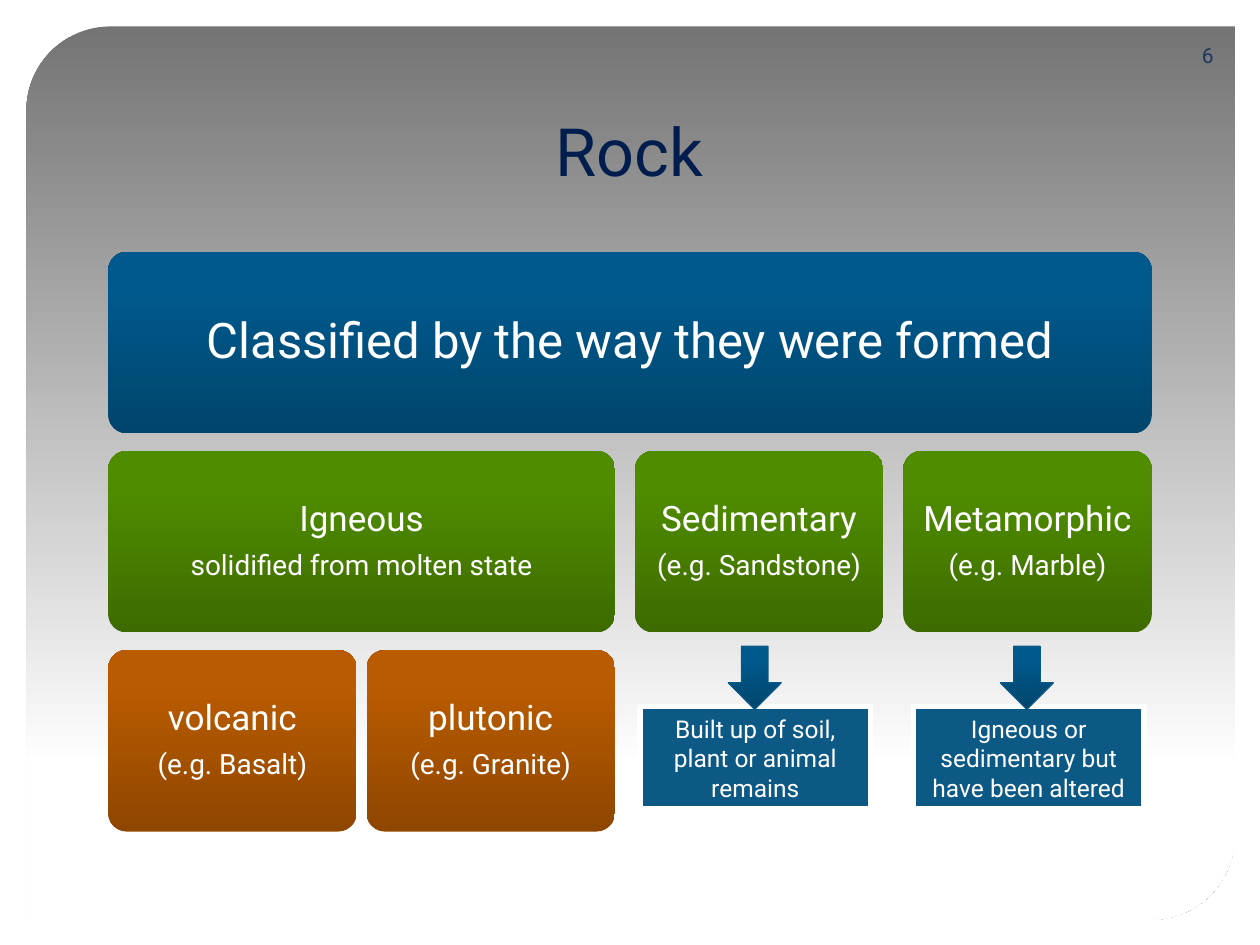
import pptx
import pptx.util
import pptx.dml.color
import pptx.enum.shapes
import pptx.enum.text

Inches = pptx.util.Inches
Pt = pptx.util.Pt
RGBColor = pptx.dml.color.RGBColor
SHAPE = pptx.enum.shapes.MSO_SHAPE
ALIGN = pptx.enum.text.PP_ALIGN
ANCHOR = pptx.enum.text.MSO_ANCHOR

FONT = "Roboto"
WHITE = RGBColor(0xFF, 0xFF, 0xFF)
GREY = RGBColor(0x74, 0x74, 0x74)
NAVY = RGBColor(0x00, 0x1D, 0x4D)
NUMBER_BLUE = RGBColor(0x1B, 0x38, 0x61)
NOTE_BLUE = RGBColor(0x0C, 0x59, 0x86)
ARROW_EDGE = RGBColor(0x09, 0x58, 0x86)
BLUE = (RGBColor(0x00, 0x45, 0x6D), RGBColor(0x00, 0x59, 0x8D))
GREEN = (RGBColor(0x3D, 0x6B, 0x00), RGBColor(0x4F, 0x8C, 0x00))
ORANGE = (RGBColor(0x8F, 0x46, 0x00), RGBColor(0xB9, 0x5B, 0x00))

LEFT, TOP = 0.86, 2
CARD_WIDTH, CARD_HEIGHT = 1.97, 1.44
ROW_STEP = CARD_HEIGHT + 0.14
NARROW_GAP, WIDE_GAP = 0.08, 0.16
PAIR_WIDTH = 2 * CARD_WIDTH + NARROW_GAP
PLUTONIC_LEFT = LEFT + CARD_WIDTH + NARROW_GAP
SEDIMENTARY_LEFT = LEFT + PAIR_WIDTH + WIDE_GAP
METAMORPHIC_LEFT = SEDIMENTARY_LEFT + CARD_WIDTH + WIDE_GAP
FULL_WIDTH = METAMORPHIC_LEFT + CARD_WIDTH - LEFT


class RockSlide:
    def __init__(self, deck):
        self.slide = deck.slides.add_slide(deck.slide_layouts[5])

    def fill_text(self, frame, lines, sizes, color, align=ALIGN.CENTER):
        frame.text = "\n".join(lines)
        frame.word_wrap = True
        for paragraph, size in zip(frame.paragraphs, sizes):
            paragraph.alignment = align
            for run in paragraph.runs:
                run.font.name = FONT
                run.font.size = Pt(size)
                run.font.color.rgb = color

    def shape(self, kind, left, top, width, height):
        shape = self.slide.shapes.add_shape(
            kind, Inches(left), Inches(top), Inches(width), Inches(height))
        shape.shadow.inherit = False
        shape.line.fill.background()
        return shape

    def shade(self, shape, colors, angle, end):
        shape.fill.gradient()
        shape.fill.gradient_angle = angle
        for stop, color, position in zip(shape.fill.gradient_stops, colors, (0, end)):
            stop.color.rgb = color
            stop.position = position

    def panel(self):
        panel = self.shape(SHAPE.ROUND_2_DIAG_RECTANGLE, 0.21, 0.21, 9.59, 7.09)
        panel.adjustments[0] = 0.094
        panel.adjustments[1] = 0
        self.shade(panel, (GREY, WHITE), 270, 0.83)

    def title(self, text):
        title = self.slide.shapes.title
        title.left, title.top = Inches(0.85), Inches(0.42)
        title.width, title.height = Inches(8.29), Inches(1.14)
        title.text_frame.vertical_anchor = ANCHOR.BOTTOM
        self.fill_text(title.text_frame, [text], [38], NAVY)
        self.slide.shapes._spTree.append(title._element)

    def number(self, text):
        number = self.slide.shapes.add_textbox(
            Inches(9.19), Inches(0.24), Inches(0.54), Inches(0.4))
        number.text_frame.vertical_anchor = ANCHOR.MIDDLE
        self.fill_text(number.text_frame, [text], [12], NUMBER_BLUE, ALIGN.RIGHT)

    def card(self, left, row, width, colors, lines, sizes=(20, 16), inset=0.08):
        card = self.shape(SHAPE.ROUNDED_RECTANGLE, left, TOP + row * ROW_STEP,
                          width, CARD_HEIGHT)
        card.adjustments[0] = 0.1
        self.shade(card, colors, 90, 0.8)
        frame = card.text_frame
        frame.margin_left = frame.margin_right = Inches(inset)
        frame.margin_top = frame.margin_bottom = Inches(inset)
        self.fill_text(frame, lines, sizes, WHITE)
        for paragraph, size in zip(frame.paragraphs, sizes):
            paragraph.line_spacing = 0.9
            paragraph.space_after = Pt(0.35 * size)

    def note(self, left, text):
        note = self.shape(SHAPE.RECTANGLE, left, 5.61, 1.83, 0.81)
        note.fill.solid()
        note.fill.fore_color.rgb = NOTE_BLUE
        note.line.color.rgb = WHITE
        note.line.width = Pt(3)
        self.fill_text(note.text_frame, [text], [14], WHITE)
        note.text_frame.auto_size = pptx.enum.text.MSO_AUTO_SIZE.SHAPE_TO_FIT_TEXT

    def arrow(self, left):
        arrow = self.shape(SHAPE.DOWN_ARROW, left, 5.13, 0.42, 0.5)
        self.shade(arrow, BLUE, 90, 0.8)
        arrow.line.color.rgb = ARROW_EDGE
        arrow.line.width = Pt(0.75)


def main():
    deck = pptx.Presentation()
    deck.slide_width, deck.slide_height = Inches(10), Inches(7.5)
    rock = RockSlide(deck)
    rock.panel()
    rock.title("Rock")
    rock.card(LEFT, 0, FULL_WIDTH, BLUE,
              ["Classified by the way they were formed"], [28], 0.12)
    for left, row, width, colors, name, detail in (
        (LEFT, 1, PAIR_WIDTH, GREEN, "Igneous", "solidified from molten state"),
        (LEFT, 2, CARD_WIDTH, ORANGE, "volcanic", "(e.g. Basalt)"),
        (PLUTONIC_LEFT, 2, CARD_WIDTH, ORANGE, "plutonic", "(e.g. Granite)"),
        (SEDIMENTARY_LEFT, 1, CARD_WIDTH, GREEN, "Sedimentary", "(e.g. Sandstone)"),
        (METAMORPHIC_LEFT, 1, CARD_WIDTH, GREEN, "Metamorphic", "(e.g. Marble)"),
    ):
        rock.card(left, row, width, colors, [name, detail])
    rock.number("6")
    for note_left, arrow_left, origin in (
        (5.08, 5.78, "Built up of soil, plant or animal remains"),
        (7.25, 7.94, "Igneous or sedimentary but have been altered"),
    ):
        rock.note(note_left, origin)
        rock.arrow(arrow_left)
    deck.save("out.pptx")


if __name__ == "__main__":
    main()
